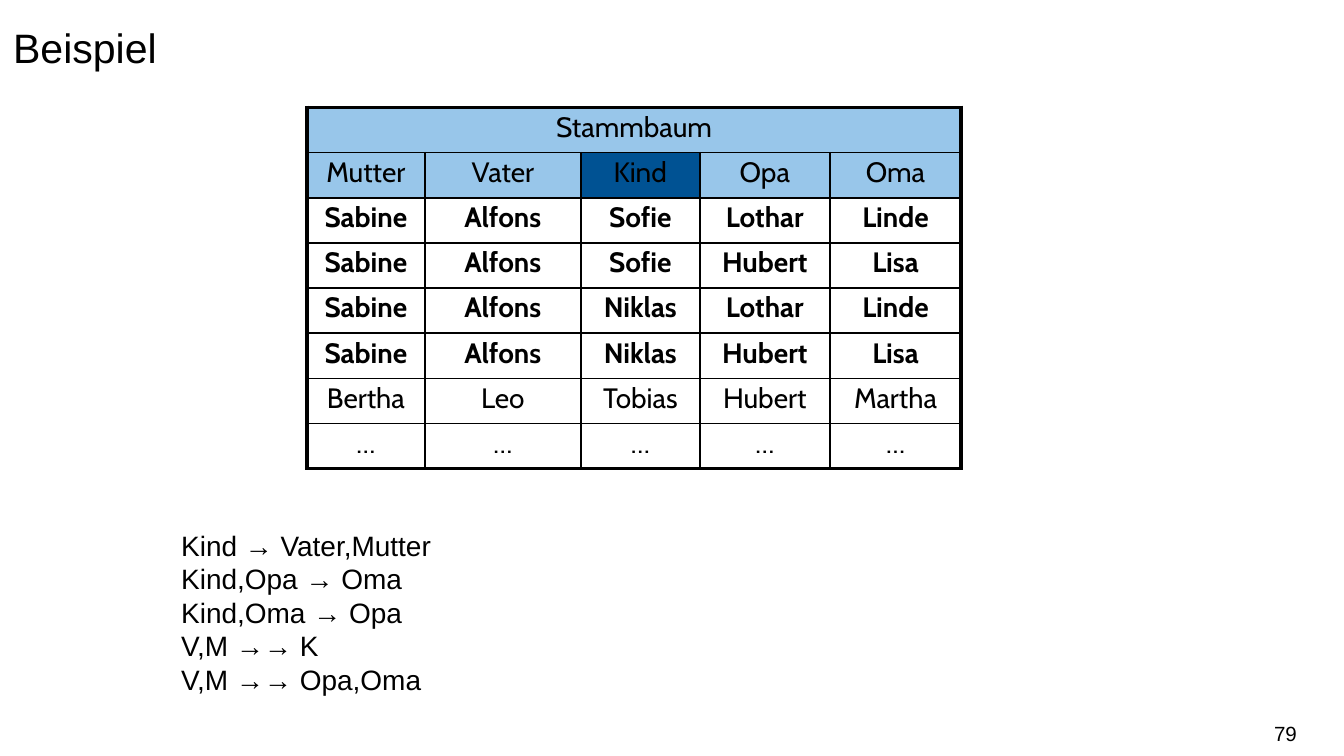
from lxml.etree import SubElement
from pptx import Presentation
from pptx.dml.color import RGBColor
from pptx.enum.text import MSO_ANCHOR as Anchor, PP_ALIGN as Align
from pptx.oxml.ns import qn
from pptx.util import Pt

BLACK, LIGHT_BLUE, DARK_BLUE = "000000", "98C6EA", "005293"
COLUMN_WIDTHS = (63.2, 83.6, 63.7, 69.7, 70.4)
ROW_HEIGHT = 24.2
ROWS = (
    ("Stammbaum", "", "", "", ""),
    ("Mutter", "Vater", "Kind", "Opa", "Oma"),
    ("Sabine", "Alfons", "Sofie", "Lothar", "Linde"),
    ("Sabine", "Alfons", "Sofie", "Hubert", "Lisa"),
    ("Sabine", "Alfons", "Niklas", "Lothar", "Linde"),
    ("Sabine", "Alfons", "Niklas", "Hubert", "Lisa"),
    ("Bertha", "Leo", "Tobias", "Hubert", "Martha"),
    ("…",) * 5,
)
DEPENDENCIES = (
    "Kind → Vater,Mutter",
    "Kind,Opa → Oma",
    "Kind,Oma → Opa",
    "V,M →→ K",
    "V,M →→ Opa,Oma",
)


def color(value):
    """Turn a hex string into a colour."""
    return RGBColor.from_string(value)


def write_text(frame, lines, size=15, font="Arial", bold=False,
               align=Align.LEFT, spacing=1.0):
    """Fill a text frame with one formatted paragraph per line."""
    for index, line in enumerate(lines):
        paragraph = frame.add_paragraph() if index else frame.paragraphs[0]
        paragraph.alignment = align
        paragraph.line_spacing = spacing
        run = paragraph.add_run()
        run.text = line
        run.font.size = Pt(size)
        run.font.name = font
        run.font.bold = bold
        run.font.color.rgb = color(BLACK)


def add_text(slide, left, top, width, height, lines, margins=(7.2, 3.6),
             anchor=Anchor.TOP, **text_format):
    """Add a wrapping text box."""
    shape = slide.shapes.add_textbox(Pt(left), Pt(top), Pt(width), Pt(height))
    frame = shape.text_frame
    frame.word_wrap = True
    frame.vertical_anchor = anchor
    frame.margin_left = frame.margin_right = Pt(margins[0])
    frame.margin_top = frame.margin_bottom = Pt(margins[1])
    write_text(frame, lines, **text_format)


def set_borders(cell, **widths):
    """Draw the four black borders of a cell, in the order L, R, T, B."""
    properties = cell._tc.get_or_add_tcPr()
    for side, width in widths.items():
        line = SubElement(properties, qn(f"a:ln{side}"), w=str(Pt(width)))
        fill = SubElement(line, qn("a:solidFill"))
        SubElement(fill, qn("a:srgbClr"), val=BLACK)


def fill_cell(cell, row, column):
    """Colour the two heading rows and mark the key column."""
    if row > 1:
        cell.fill.background()
        return
    cell.fill.solid()
    is_key = (row, column) == (1, 2)
    cell.fill.fore_color.rgb = color(DARK_BLUE if is_key else LIGHT_BLUE)


def add_family_table(slide, left, top):
    """Add the family tree table with a thick outer frame."""
    last_row, last_column = len(ROWS) - 1, len(COLUMN_WIDTHS) - 1
    table = slide.shapes.add_table(
        len(ROWS), len(COLUMN_WIDTHS), Pt(left), Pt(top),
        Pt(sum(COLUMN_WIDTHS)), Pt(ROW_HEIGHT * len(ROWS))).table
    table.first_row = table.horz_banding = False
    for column, width in zip(table.columns, COLUMN_WIDTHS):
        column.width = Pt(width)
    table.cell(0, 0).merge(table.cell(0, last_column))
    for row, names in enumerate(ROWS):
        table.rows[row].height = Pt(ROW_HEIGHT)
        for column, name in enumerate(names):
            cell = table.cell(row, column)
            cell.margin_left = cell.margin_right = Pt(5)
            cell.margin_top = cell.margin_bottom = Pt(2.9)
            set_borders(cell,
                        L=2.25 if column == 0 else 1,
                        R=2.25 if column == last_column or row == 0 else 1,
                        T=2.25 if row == 0 else 1,
                        B=2.25 if row == last_row else 1)
            fill_cell(cell, row, column)
            if name:
                write_text(cell.text_frame, [name], font="Cabin",
                           bold=2 <= row <= 5, align=Align.CENTER, spacing=0.9)


def main():
    """Build and save the slide."""
    presentation = Presentation()
    presentation.slide_width, presentation.slide_height = Pt(720), Pt(405)
    slide = presentation.slides.add_slide(presentation.slide_layouts[6])
    add_text(slide, 0, 0, 720, 67.5, ["Beispiel"], margins=(7.2, 5.6),
             size=22, spacing=1.25)
    add_text(slide, 90, 279.4, 540, 126, DEPENDENCIES)
    add_family_table(slide, 164.4, 57.6)
    add_text(slide, 533.5, 382.3, 161.3, 21.6, ["79"], margins=(0, 3.6),
             anchor=Anchor.MIDDLE, size=11, align=Align.RIGHT)
    presentation.save("out.pptx")


if __name__ == "__main__":
    main()
